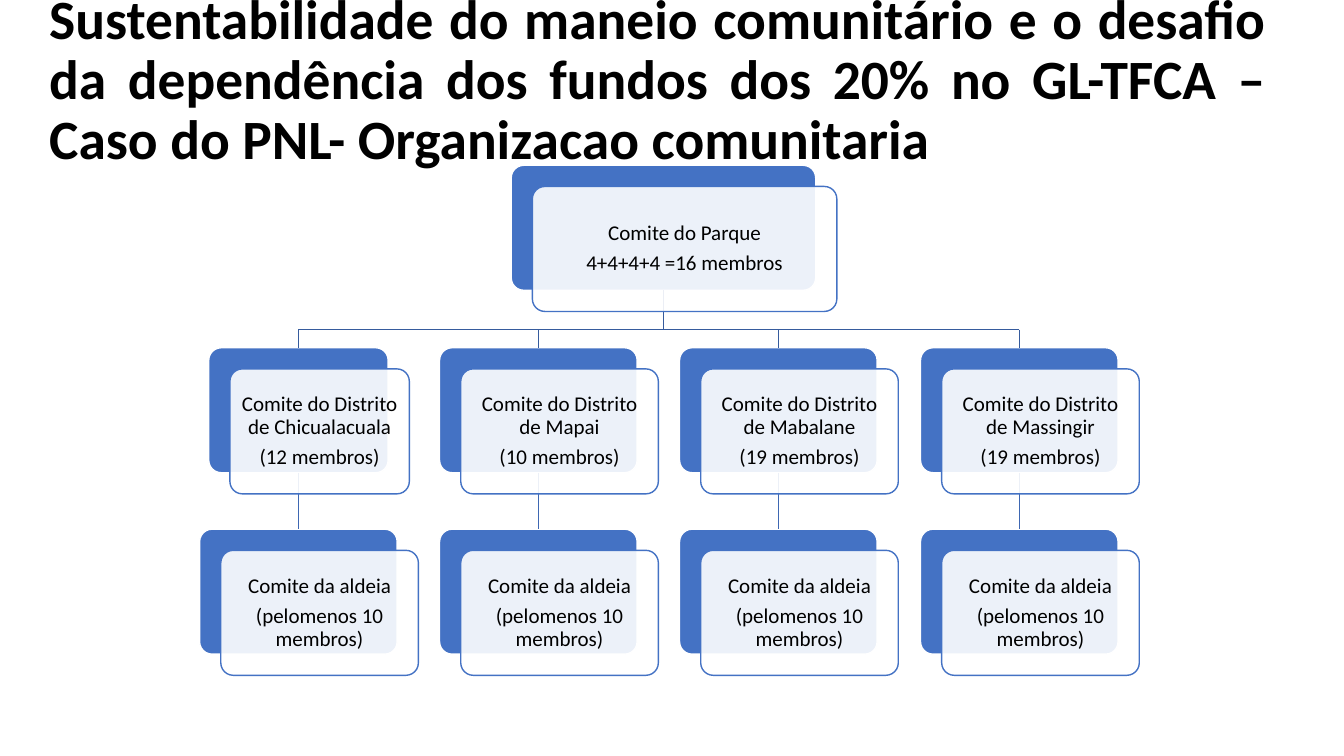
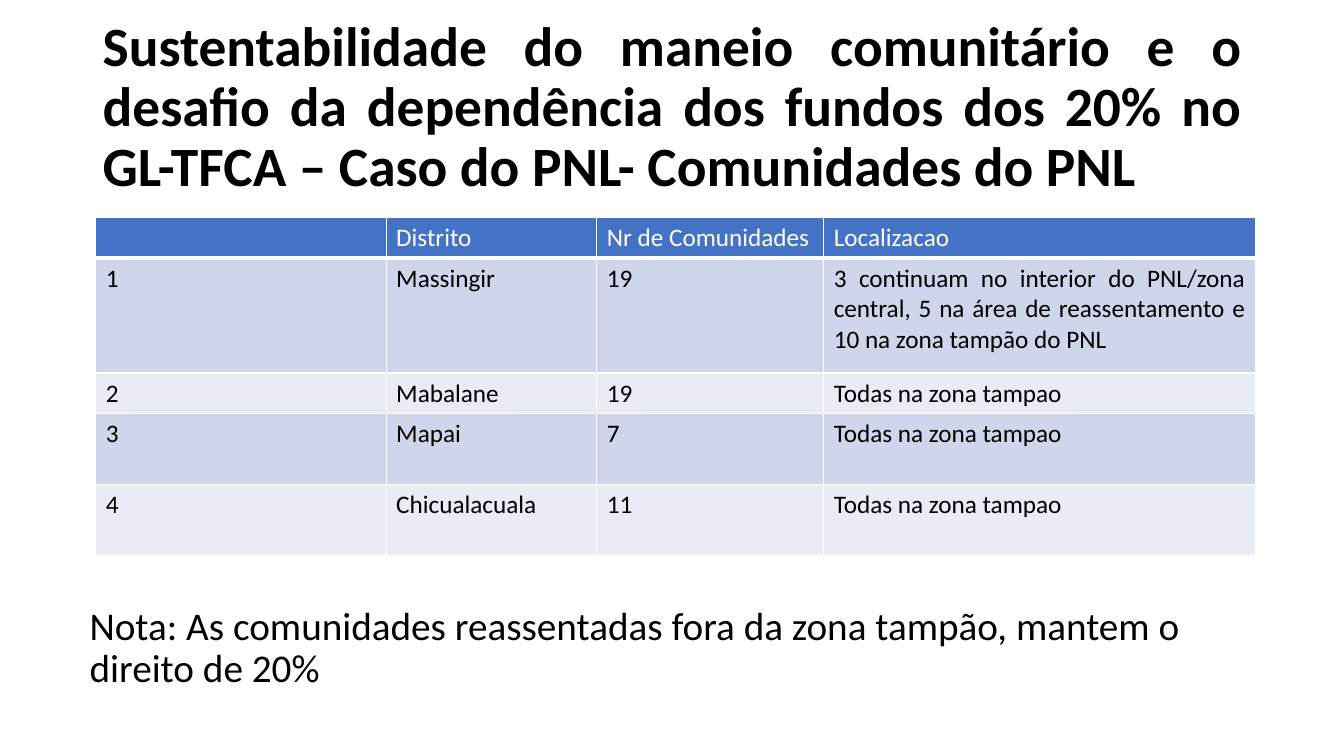
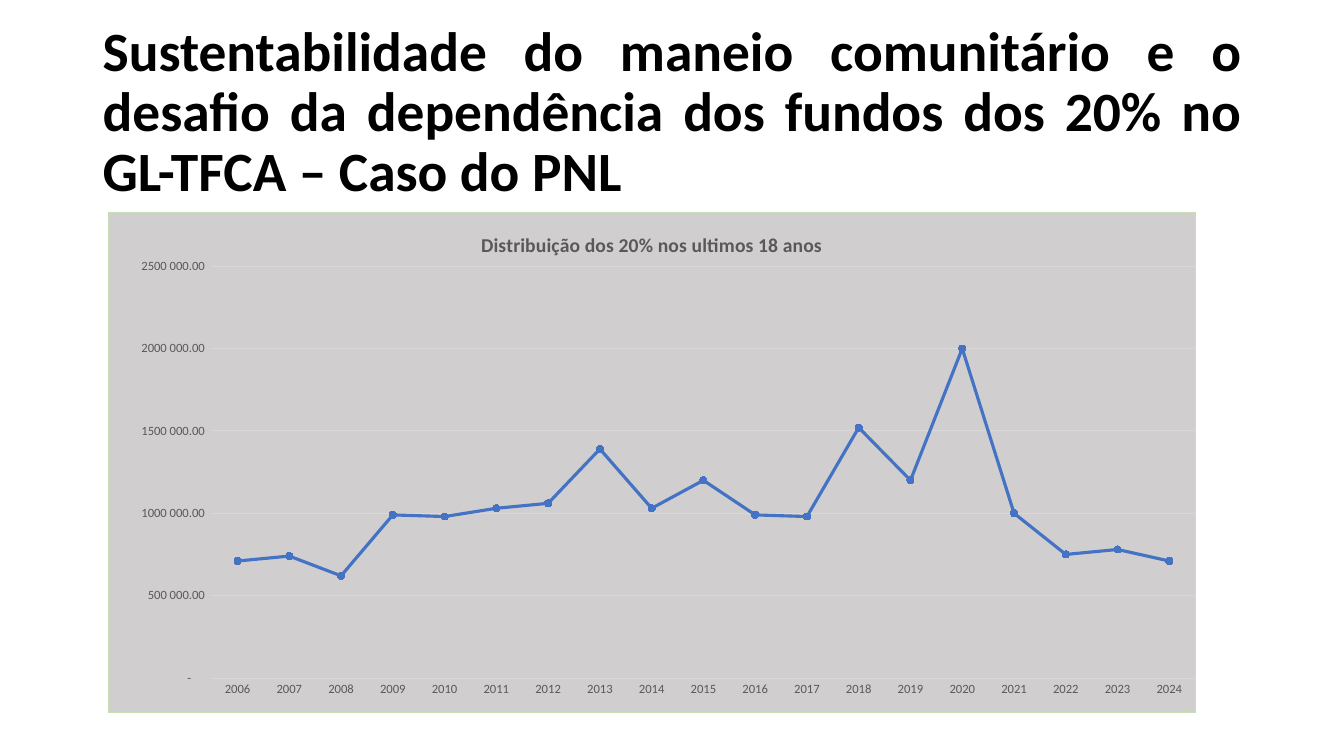
from pptx import Presentation
from pptx.chart.data import CategoryChartData
from pptx.dml.color import RGBColor
from pptx.enum.chart import XL_CHART_TYPE, XL_MARKER_STYLE, XL_TICK_MARK
from pptx.enum.shapes import MSO_CONNECTOR, MSO_SHAPE
from pptx.enum.text import MSO_ANCHOR, PP_ALIGN
from pptx.oxml import parse_xml
from pptx.oxml.ns import nsdecls, qn
from pptx.util import Emu, Pt

# Shared look
FONT = "Calibri"
BLACK = RGBColor(0x00, 0x00, 0x00)
WHITE = RGBColor(0xFF, 0xFF, 0xFF)
BLUE = RGBColor(0x44, 0x72, 0xC4)
TRUNK = RGBColor(0x36, 0x5B, 0x9D)
BRANCH = RGBColor(0x3E, 0x67, 0xB2)
BAND_DARK = RGBColor(0xCF, 0xD5, 0xEA)
BAND_LIGHT = RGBColor(0xE9, 0xEB, 0xF5)
GRAY = RGBColor(0x59, 0x59, 0x59)
GRID = RGBColor(0xD9, 0xD9, 0xD9)
PANEL = RGBColor(0xD0, 0xCE, 0xCE)
EDGE = RGBColor(0xC5, 0xE0, 0xB4)

TITLE = ("Sustentabilidade do maneio comunitário e o desafio da dependência "
         "dos fundos dos 20% no GL-TFCA – Caso do PNL")

# Chart of committees
CARD_H = 124
SHIFT = 21
BUS_Y = 327
DISTRICTS = [("Chicualacuala", 12, 178), ("Mapai", 10, 196),
             ("Mabalane", 19, 196), ("Massingir", 19, 196)]

# Table of communities
COLS = [288, 209, 225, 428]
ROWS = [40, 114, 40, 71, 70]
CELLS = [
    ["", "Distrito", "Nr de Comunidades", "Localizacao"],
    ["1", "Massingir", "19", "3 continuam no interior do PNL/zona central, "
     "5 na área de reassentamento e 10 na zona tampão do PNL"],
    ["2", "Mabalane", "19", "Todas na zona tampao"],
    ["3", "Mapai", "7", "Todas na zona tampao"],
    ["4", "Chicualacuala", "11", "Todas na zona tampao"],
]

# Yearly payments, in thousands
FUNDS = [710, 740, 620, 990, 980, 1030, 1060, 1390, 1030, 1200,
         990, 980, 1520, 1200, 2000, 1000, 750, 780, 710]
MONEY = r'_(* #\ ##0.00_);_(* \(#\ ##0.00\);_(* "-"??_);_(@_)'


def px(n):
    """One px is a hundredth of an inch."""
    return Emu(n * 9144)


def style(font, size, color=BLACK, bold=False):
    font.name, font.size, font.bold = FONT, Pt(size), bold
    font.color.rgb = color


def write(frame, *lines, size=18, color=BLACK, bold=False, align=PP_ALIGN.LEFT,
          anchor=MSO_ANCHOR.TOP, spacing=0.9, after=0):
    frame.word_wrap = True
    frame.vertical_anchor = anchor
    for i, line in enumerate(lines):
        para = frame.add_paragraph() if i else frame.paragraphs[0]
        para.alignment = align
        para.line_spacing = spacing
        para.space_after = Pt(after)
        run = para.add_run()
        run.text = line
        style(run.font, size, color, bold)


def label(slide, text, x, y, w, h, **kw):
    box = slide.shapes.add_textbox(px(x), px(y), px(w), px(h))
    write(box.text_frame, text, **kw)


def title(slide, text, x, y, w, h):
    label(slide, text, x, y, w, h, size=39.6, bold=True,
          align=PP_ALIGN.JUSTIFY, anchor=MSO_ANCHOR.MIDDLE)


def panel(slide, x, y, w, fill, line):
    card = slide.shapes.add_shape(MSO_SHAPE.ROUNDED_RECTANGLE,
                                  px(x), px(y), px(w), px(CARD_H))
    card.adjustments[0] = 0.1
    card.shadow.inherit = False
    card.fill.solid()
    card.fill.fore_color.rgb = fill
    card.line.color.rgb = line
    card.line.width = Pt(1)
    return card


def front(slide, x, y, w, lines):
    """The translucent card that carries the text."""
    card = panel(slide, x + SHIFT, y + SHIFT, w, WHITE, BLUE)
    tone = card._element.spPr.find(qn("a:solidFill")).find(qn("a:srgbClr"))
    tone.append(parse_xml(f'<a:alpha {nsdecls("a")} val="90000"/>'))
    frame = card.text_frame
    frame.margin_left = frame.margin_right = px(6)
    frame.margin_top = frame.margin_bottom = px(6)
    write(frame, *lines, size=15, align=PP_ALIGN.CENTER,
          anchor=MSO_ANCHOR.MIDDLE, after=5.5)


def link(slide, x1, y1, x2, y2, color, start=None, end=None):
    wire = slide.shapes.add_connector(MSO_CONNECTOR.STRAIGHT,
                                      px(x1), px(y1), px(x2), px(y2))
    wire.line.color.rgb = color
    wire.line.width = Pt(1)
    wire._element.spPr.append(parse_xml(f'<a:effectLst {nsdecls("a")}/>'))
    if start:
        wire.begin_connect(start, 2)
    if end:
        wire.end_connect(end, 0)


def tree(slide):
    mids = [296 + i * 715 // 3 for i in range(4)]
    cards = [(507, 164, 302, ["Comite do Parque", "4+4+4+4 =16 membros"])]
    for mid, (name, count, wide) in zip(mids, DISTRICTS):
        cards.append((mid - wide // 2, 345, wide,
                      [f"Comite do Distrito de {name}", f"({count} membros)"]))
        cards.append((mid - 98, 525, 196,
                      ["Comite da aldeia", "(pelomenos 10 membros)"]))

    # Back cards, then lines, then front cards
    root, *rest = [panel(slide, x, y, w, BLUE, WHITE) for x, y, w, _ in cards]
    link(slide, 658, 288, 658, BUS_Y, TRUNK, start=root)
    link(slide, mids[0], BUS_Y, mids[-1], BUS_Y, TRUNK)
    for mid, area, town in zip(mids, rest[::2], rest[1::2]):
        link(slide, mid, BUS_Y, mid, 345, TRUNK, end=area)
        link(slide, mid, 469, mid, 525, BRANCH, start=area, end=town)
    for card in cards:
        front(slide, *card)


def border(cell, heavy):
    props = cell._tc.get_or_add_tcPr()
    for i, side in enumerate("LRTB"):
        width = Pt(3 if heavy and side == "B" else 1)
        props.insert(i, parse_xml(
            f'<a:ln{side} {nsdecls("a")} w="{width}"><a:solidFill>'
            f'<a:srgbClr val="{WHITE}"/></a:solidFill></a:ln{side}>'))


def grid(slide, x, y):
    table = slide.shapes.add_table(len(ROWS), len(COLS), px(x), px(y),
                                   px(sum(COLS)), px(sum(ROWS))).table
    for col, wide in zip(table.columns, COLS):
        col.width = px(wide)
    for r, (high, texts) in enumerate(zip(ROWS, CELLS)):
        table.rows[r].height = px(high)
        fill = BAND_DARK if r % 2 else BAND_LIGHT
        for c, text in enumerate(texts):
            cell = table.cell(r, c)
            cell.fill.solid()
            cell.fill.fore_color.rgb = fill if r else BLUE
            border(cell, heavy=r == 0)
            if text:
                write(cell.text_frame, text, color=BLACK if r else WHITE,
                      spacing=1, align=PP_ALIGN.JUSTIFY if (r, c) == (1, 3)
                      else PP_ALIGN.LEFT)


def frame_plot(chart):
    """Panel fill, border and fixed plot area."""
    chart._chartSpace.find(qn("c:chart")).addnext(parse_xml(
        f'<c:spPr {nsdecls("c", "a")}>'
        f'<a:solidFill><a:srgbClr val="{PANEL}"/></a:solidFill>'
        f'<a:ln w="{Pt(0.75)}"><a:solidFill><a:srgbClr val="{EDGE}"/>'
        '</a:solidFill></a:ln></c:spPr>'))
    area = chart._chartSpace.find(".//" + qn("c:plotArea"))
    for old in area.findall(qn("c:layout")):
        area.remove(old)
    spots = "".join(f'<c:{k} val="{v}"/>' for k, v in [
        ("layoutTarget", "inner"), ("xMode", "edge"), ("yMode", "edge"),
        ("x", 0.095), ("y", 0.108), ("w", 0.905), ("h", 0.824)])
    area.insert(0, parse_xml(
        f'<c:layout {nsdecls("c")}><c:manualLayout>{spots}'
        '</c:manualLayout></c:layout>'))


def plot(slide, x, y, w, h):
    data = CategoryChartData()
    data.categories = [str(2006 + i) for i in range(len(FUNDS))]
    data.add_series("Series 1", [n * 1000 for n in FUNDS])
    chart = slide.shapes.add_chart(XL_CHART_TYPE.LINE_MARKERS, px(x), px(y),
                                   px(w), px(h), data).chart
    style(chart.font, 10)
    chart.has_legend = False
    chart.has_title = True
    head = chart.chart_title.text_frame
    head.text = "Distribuição dos 20% nos ultimos 18 anos"
    style(head.paragraphs[0].runs[0].font, 14, GRAY, True)
    frame_plot(chart)

    # Axes
    years, money = chart.category_axis, chart.value_axis
    for axis in (years, money):
        axis.major_tick_mark = axis.minor_tick_mark = XL_TICK_MARK.NONE
        style(axis.tick_labels.font, 9, GRAY)
    money.minimum_scale, money.maximum_scale = 0, 2500000
    money.major_unit = 500000
    money.tick_labels.number_format = MONEY
    money.tick_labels.number_format_is_linked = False
    money.format.line.fill.background()
    for line in (years.format.line, money.major_gridlines.format.line):
        line.color.rgb = GRID
        line.width = Pt(0.75)

    # Series
    chart.plots[0].vary_by_categories = False
    series = chart.plots[0].series[0]
    series.smooth = False
    series.format.line.color.rgb = BLUE
    series.format.line.width = Pt(2.25)
    mark = series.marker
    mark.style, mark.size = XL_MARKER_STYLE.CIRCLE, 5
    mark.format.fill.solid()
    mark.format.fill.fore_color.rgb = BLUE
    mark.format.line.color.rgb = BLUE


def main():
    deck = Presentation()
    deck.slide_width, deck.slide_height = px(1333), px(750)
    people, places, funds = [deck.slides.add_slide(deck.slide_layouts[6])
                             for _ in range(3)]

    title(people, TITLE + "- Organizacao comunitaria", 39, 64, 1227, 34)
    tree(people)

    title(places, TITLE + "- Comunidades do PNL", 92, 40, 1150, 135)
    grid(places, 95, 216)
    label(places, "Nota: As comunidades reassentadas fora da zona tampão, "
          "mantem o direito de 20%", 79, 597, 1201, 100, size=28)

    title(funds, TITLE, 92, 40, 1150, 145)
    plot(funds, 107, 210, 1079, 497)

    deck.save("out.pptx")


if __name__ == "__main__":
    main()
